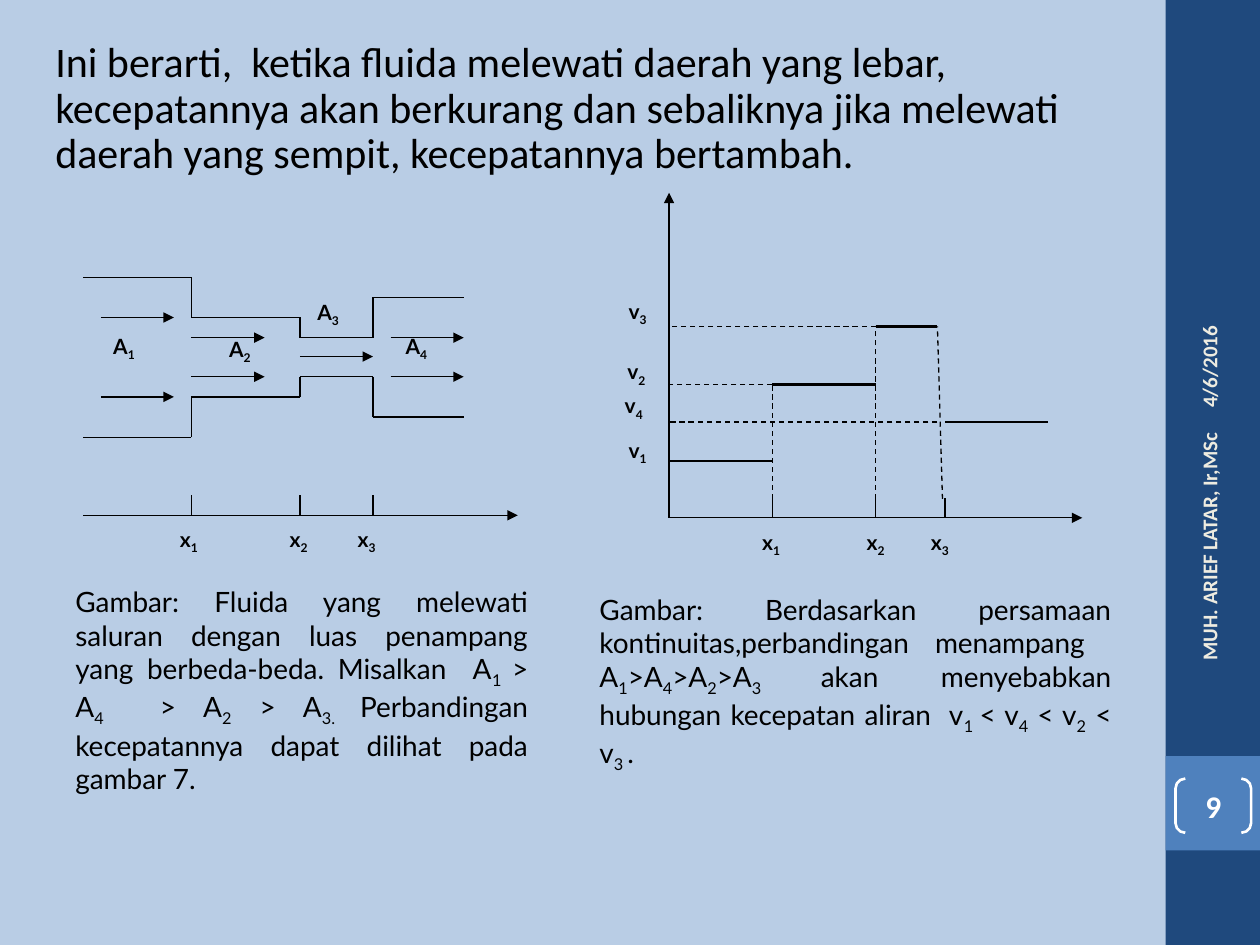
import itertools

import pptx
import pptx.dml.color
import pptx.enum.dml
import pptx.enum.shapes
import pptx.enum.text
import pptx.oxml.ns
import pptx.util
from lxml import etree

Inches = pptx.util.Inches
Pt = pptx.util.Pt
RGBColor = pptx.dml.color.RGBColor
Shape = pptx.enum.shapes.MSO_SHAPE
Align = pptx.enum.text.PP_ALIGN
Anchor = pptx.enum.text.MSO_ANCHOR
qn = pptx.oxml.ns.qn

PALE_BLUE = RGBColor(0xB9, 0xCD, 0xE5)
NAVY = RGBColor(0x1F, 0x49, 0x7D)
BLUE = RGBColor(0x4F, 0x81, 0xBD)
CREAM = RGBColor(0xEE, 0xEC, 0xE1)
WHITE = RGBColor(0xFF, 0xFF, 0xFF)
BLACK = RGBColor(0, 0, 0)


class SlidePainter:
    thin = 0.75
    thick = 1.5
    body_font = "Calibri"
    figure_font = "Lato"

    def __init__(self, page):
        self.page = page

    def block(self, left, top, width, height, color):
        block = self.page.shapes.add_shape(
            Shape.RECTANGLE, Inches(left), Inches(top), Inches(width), Inches(height))
        block.shadow.inherit = False
        block.fill.solid()
        block.fill.fore_color.rgb = color
        block.line.fill.background()

    def add_spans(self, para, text, size, font, color, bold=False):
        """Fill a paragraph; every second part between bars is a subscript."""
        for index, part in enumerate(text.split("|")):
            if not part:
                continue
            span = para.add_run()
            span.text = part
            span.font.size = Pt(size)
            span.font.name = font
            span.font.bold = bold
            span.font.color.rgb = color
            if index % 2:
                span.font._element.set("baseline", "-25000")

    def text(self, left, top, width, height, text, size, font=figure_font,
             color=BLACK, bold=False, align=Align.LEFT):
        box = self.page.shapes.add_textbox(
            Inches(left), Inches(top), Inches(width), Inches(height))
        box.text_frame.word_wrap = True
        para = box.text_frame.paragraphs[0]
        para.alignment = align
        self.add_spans(para, text, size, font, color, bold)
        return box

    def side_text(self, left, top, width, text, align):
        box = self.text(left, top, width, 0.4, text, 12, self.body_font, CREAM, True, align)
        box.rotation = 270
        box.text_frame.vertical_anchor = Anchor.MIDDLE

    def label(self, left, top, letter, number, size=0.55):
        self.text(left, top, size, 0.46, f"{letter}|{number}", 12, bold=True)

    def page_number(self, left, top, width, height, text):
        bracket = self.page.shapes.add_shape(
            Shape.DOUBLE_BRACKET, Inches(left), Inches(top), Inches(width), Inches(height))
        bracket.shadow.inherit = False
        bracket.adjustments[0] = 0.18
        bracket.fill.background()
        bracket.line.color.rgb = WHITE
        bracket.line.width = Pt(self.thick)
        frame = bracket.text_frame
        frame.margin_left = frame.margin_right = frame.margin_top = frame.margin_bottom = 0
        frame.vertical_anchor = Anchor.MIDDLE
        para = frame.paragraphs[0]
        para.alignment = Align.CENTER
        self.add_spans(para, text, 18, self.body_font, WHITE, True)

    def line(self, start, end, width=thin, arrow=False, dashed=False):
        line = self.page.shapes.add_connector(
            pptx.enum.shapes.MSO_CONNECTOR.STRAIGHT,
            *(Inches(value) for value in (*start, *end)))
        line.line.color.rgb = BLACK
        line.line.width = Pt(width)
        if dashed:
            line.line.dash_style = pptx.enum.dml.MSO_LINE.DASH
        if arrow:
            outline = line.line._get_or_add_ln()
            etree.SubElement(outline, qn("a:tailEnd"), type="triangle")
        etree.SubElement(line._element.spPr, qn("a:effectLst"))

    def joined_lines(self, points):
        """Join successive points with separate lines."""
        for start, end in itertools.pairwise(points):
            self.line(start, end)

    def x_axis(self, left, right, y, ticks):
        self.line((left, y), (right, y), arrow=True)
        for x in ticks:
            self.line((x, y), (x, y - 0.16))


def draw_frame(painter):
    painter.block(9.25, 0, 0.75, 7.5, NAVY)
    painter.block(9.25, 6, 0.75, 0.75, BLUE)
    painter.side_text(8.26, 1.8, 2.67, "4/6/2016", Align.LEFT)
    painter.side_text(8.3, 4.43, 2.59, "MUH. ARIEF LATAR, Ir,MSc", Align.RIGHT)
    painter.page_number(9.33, 6.18, 0.6, 0.43, "9")
    intro = painter.text(
        0.34, 0.28, 8.58, 1.25,
        "Ini berarti,  ketika fluida melewati daerah yang lebar, kecepatannya akan "
        "berkurang dan sebaliknya jika melewati daerah yang sempit, kecepatannya bertambah.",
        24, painter.body_font)
    intro.text_frame.paragraphs[0].line_spacing = 0.9


def draw_pipe(painter):
    edges = [0.66, 1.52, 2.38, 2.96, 3.68]
    wall_tops = [2.2, 2.52, 2.68, 2.36]
    mirror = 5.67  # sum of the heights of the upper and lower wall

    painter.x_axis(edges[0], 4.11, 4.09, edges[1:4])
    for number, left in enumerate([1.33, 2.2, 2.74], 1):
        painter.label(left, 4.13, "x", number, 0.58)

    upper = [(x, y) for (left, right), y in zip(itertools.pairwise(edges), wall_tops)
             for x in (left, right)]
    painter.joined_lines(upper)
    painter.joined_lines([(x, mirror - y) for x, y in upper])

    for number, (left, top) in enumerate(
            [(0.8, 2.6), (1.72, 2.62), (2.42, 2.33), (3.12, 2.6)], 1):
        painter.label(left, top, "A", number, 0.58)

    for left, y in [(0.8, 2.52), (1.52, 2.68), (3.1, 2.68)]:
        for height in (y, mirror - y):
            painter.line((left, height), (left + 0.58, height), arrow=True)
    painter.line((2.38, 2.83), (2.96, 2.83), arrow=True)

    painter.text(
        0.5, 4.59, 3.79, 1.58,
        "Gambar: Fluida yang melewati saluran dengan luas penampang yang berbeda-beda. "
        "Misalkan  A|1 |> A|4|  > A|2| > A|3. |Perbandingan kecepatannya dapat dilihat "
        "pada gambar 7.", 16, align=Align.JUSTIFY)


def draw_speed_graph(painter):
    origin_x, origin_y = 5.31, 4.11
    x1, x2, x3 = 6.13, 6.95, 7.5
    v1, v2, v3, v4 = 3.66, 3.05, 2.59, 3.35
    step_end = 7.44

    painter.x_axis(origin_x, 8.59, origin_y, [x1, x2, x3])
    painter.line((origin_x, origin_y), (origin_x, 1.53), arrow=True)
    for number, left in enumerate([5.95, 6.78, 7.29], 1):
        painter.label(left, 4.15, "x", number)

    for x, y in [(x1, v2), (x2, v3), (step_end, v4)]:
        painter.line((x, y), (origin_x, y), dashed=True)
    for bottom, top, y in [(x1, x1, v2), (x2, x2, v3), (7.48, step_end, v3)]:
        painter.line((bottom, 3.96), (top, y), dashed=True)
    for left, right, y in [(origin_x, x1, v1), (x1, x2, v2),
                           (x2, step_end, v3), (x3, 8.32, v4)]:
        painter.line((left, y), (right, y), painter.thick)

    for number, (left, top) in enumerate(
            [(4.89, 3.42), (4.88, 2.8), (4.89, 2.32), (4.86, 3.07)], 1):
        painter.label(left, top, "v", number)

    painter.text(
        4.66, 4.65, 4.26, 1.53,
        "Gambar: Berdasarkan persamaan kontinuitas,perbandingan menampang  "
        "A|1|>A|4|>A|2|>A|3 |akan menyebabkan hubungan kecepatan aliran  "
        "v|1 |< v|4| < v|2| < v|3 |.", 16, align=Align.JUSTIFY)


def main():
    deck = pptx.Presentation()
    deck.slide_width = Inches(10)
    deck.slide_height = Inches(7.5)
    page = deck.slides.add_slide(deck.slide_layouts[6])
    page.background.fill.solid()
    page.background.fill.fore_color.rgb = PALE_BLUE
    painter = SlidePainter(page)
    draw_frame(painter)
    draw_pipe(painter)
    draw_speed_graph(painter)
    deck.save("out.pptx")


if __name__ == "__main__":
    main()
